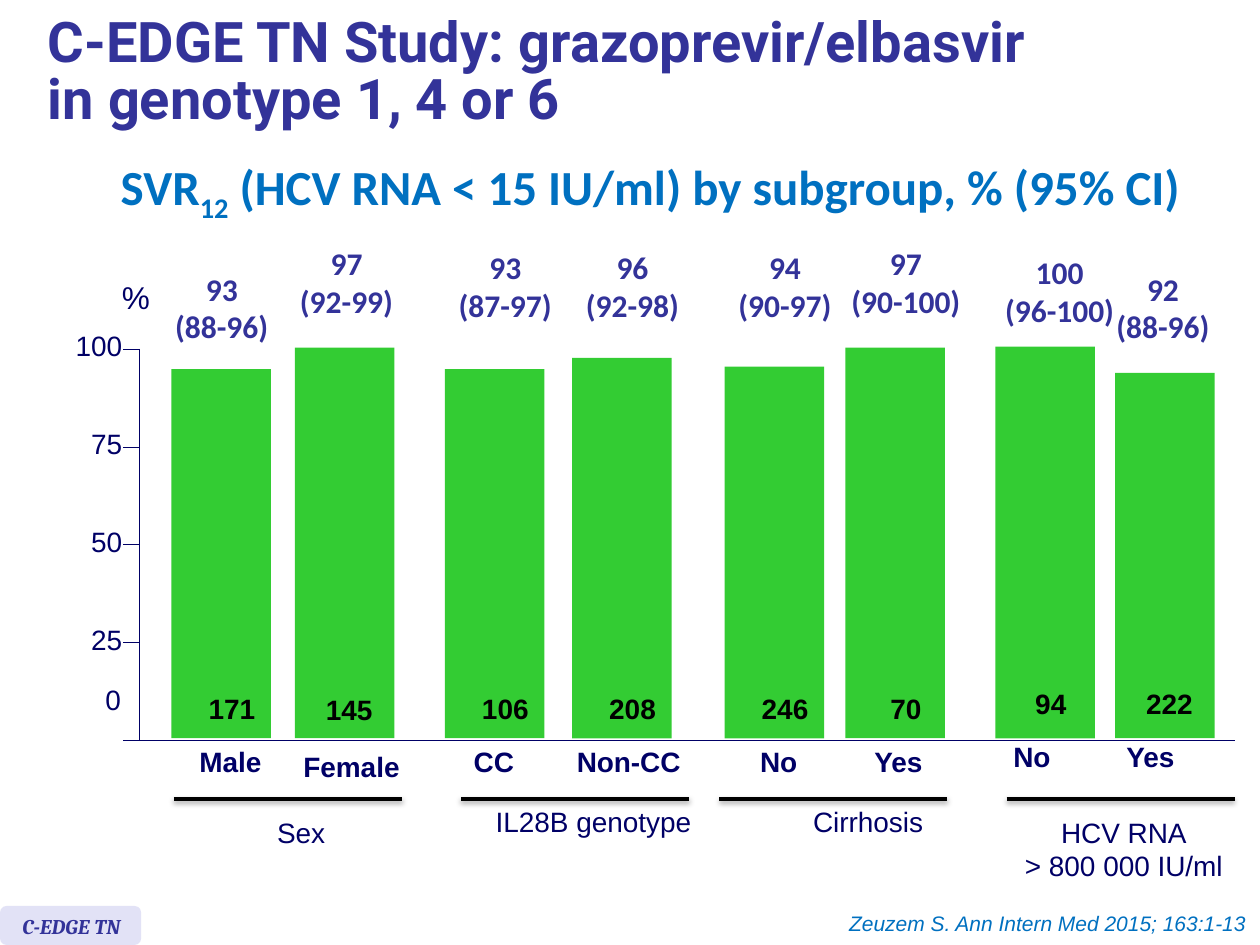
from collections import namedtuple

from lxml import etree
from pptx import Presentation
from pptx.dml.color import RGBColor
from pptx.enum import shapes, text
from pptx.oxml import ns
from pptx.util import Inches, Pt

NAVY = RGBColor(0x00, 0x00, 0x66)
INDIGO = RGBColor(0x33, 0x33, 0x99)
BLUE = RGBColor(0x00, 0x70, 0xC0)
GREEN = RGBColor(0x33, 0xCC, 0x33)
LAVENDER = RGBColor(0xE2, 0xE2, 0xF6)
BLACK = RGBColor(0x00, 0x00, 0x00)

LEFT, CENTER, RIGHT = text.PP_ALIGN.LEFT, text.PP_ALIGN.CENTER, text.PP_ALIGN.RIGHT

# x offsets run from the plot's left edge (bar) or the bar's left edge (texts);
# y offsets run down from the baseline.
Bar = namedtuple("Bar", "x height rate interval rate_x rate_y count count_x count_y "
                        "name name_x name_y name_width")
BARS = [
    Bar(0.38, 2.93, "93", "(88-96)", 0.4, -3.74, "171", 0.48, -0.39, "Male", 0.47, 0.03, 0.5),
    Bar(1.36, 3.1, "97", "(92-99)", 0.41, -3.94, "145", 0.43, -0.38, "Female", 0.45, 0.07, 0.77),
    Bar(2.55, 2.93, "93", "(87-97)", 0.48, -3.91, "106", 0.48, -0.39, "CC", 0.39, 0.03, 0.32),
    Bar(3.56, 3.02, "96", "(92-98)", 0.48, -3.91, "208", 0.48, -0.39, "Non-CC", 0.45, 0.03, 0.84),
    Bar(4.77, 2.95, "94", "(90-97)", 0.48, -3.91, "246", 0.48, -0.39, "No", 0.43, 0.03, 0.3),
    Bar(5.73, 3.1, "97", "(90-100)", 0.48, -3.94, "70", 0.48, -0.39, "Yes", 0.42, 0.03, 0.4),
    Bar(6.92, 3.11, "100", "(96-100)", 0.51, -3.87, "94", 0.44, -0.43, "No", 0.29, -0.01, 0.3),
    Bar(7.87, 2.9, "92", "(88-96)", 0.38, -3.74, "222", 0.43, -0.43, "Yes", 0.28, -0.01, 0.4),
]
# Rule offset, caption centre, caption drop, caption width, caption lines
GROUPS = [
    (0.4, 1.41, 0.08, 0.59, ["Sex"]),
    (2.68, 3.73, 0, 1.77, ["IL28B genotype"]),
    (4.73, 5.91, 0, 1.09, ["Cirrhosis"]),
    (7.01, 7.94, 0.08, 1.86, ["HCV RNA", "> 800 000 IU/ml"]),
]


def write(frame, lines, size=16, font="Arial", color=NAVY, bold=False, italic=False,
          align=CENTER, spacing=None, wrap=False, inset=True):
    """Fill a frame; a line may be a list of spans whose odd entries are subscripts."""
    frame.word_wrap = wrap
    frame.auto_size = text.MSO_AUTO_SIZE.NONE
    frame.vertical_anchor = text.MSO_ANCHOR.TOP
    if not inset:
        frame.margin_left = frame.margin_right = frame.margin_top = frame.margin_bottom = 0
    for index, line in enumerate(lines):
        para = frame.paragraphs[0] if index == 0 else frame.add_paragraph()
        para.alignment = align
        if spacing:
            para.line_spacing = spacing
        for position, words in enumerate([line] if isinstance(line, str) else line):
            span = para.add_run()
            span.text = words
            span.font.name, span.font.size = font, Pt(size)
            span.font.bold, span.font.italic = bold, italic
            span.font.color.rgb = color
            if position % 2:
                span.font._element.set("baseline", "-25000")


def add_text(page, lines, left, top, width, height, **style):
    box = page.shapes.add_textbox(Inches(left), Inches(top), Inches(width), Inches(height))
    write(box.text_frame, lines, **style)


def add_centered(page, lines, center, top, width, height, **style):
    add_text(page, lines, center - width / 2, top, width, height, **style)


def add_block(page, kind, left, top, width, height, color):
    block = page.shapes.add_shape(kind, Inches(left), Inches(top), Inches(width), Inches(height))
    block.shadow.inherit = False
    block.fill.solid()
    block.fill.fore_color.rgb = color
    block.line.fill.background()


def add_line(page, x1, y1, x2, y2, color=NAVY, weight=0.5, shadow=False):
    line = page.shapes.add_connector(shapes.MSO_CONNECTOR.STRAIGHT,
                                     Inches(x1), Inches(y1), Inches(x2), Inches(y2))
    line.line.color.rgb = color
    line.line.width = Pt(weight)
    effects = etree.SubElement(line._element.spPr, ns.qn("a:effectLst"))
    if shadow:
        outer = etree.SubElement(effects, ns.qn("a:outerShdw"), blurRad=str(Pt(3.1)),
                                 dist=str(Pt(1.6)), dir="5400000", rotWithShape="0")
        tint = etree.SubElement(outer, ns.qn("a:srgbClr"), val="000000")
        etree.SubElement(tint, ns.qn("a:alpha"), val="38000")


def place_title(page, left, top, width, height):
    title = page.shapes.title
    title.left, title.top = Inches(left), Inches(top)
    title.width, title.height = Inches(width), Inches(height)
    write(title.text_frame, ["C-EDGE TN Study: grazoprevir/elbasvir", "in genotype 1, 4 or 6"],
          size=32, font="Roboto", color=INDIGO, bold=True, align=LEFT, spacing=0.85, wrap=True)


def draw_axes(page, left, top, width, height):
    tick, baseline = 0.13, top + height
    add_line(page, left + tick, top, left + tick, baseline)
    add_line(page, left, baseline, left + width, baseline)
    for index, label in enumerate(["100", "75", "50", "25"]):
        y = top + index * height / 4
        label_width = 0.13 * len(label)
        add_line(page, left, y, left + tick, y)
        add_text(page, [label], left - 0.01 - label_width, y - 0.16, label_width, 0.35,
                 align=RIGHT, inset=False)
    add_text(page, ["0"], left - 0.14, baseline - 0.46, 0.12, 0.27, align=RIGHT, inset=False)
    add_text(page, ["%"], left - 0.11, top - 0.61, 0.43, 0.52, size=18, align=LEFT)


def draw_bars(page, left, baseline):
    for bar in BARS:
        x = left + bar.x
        add_block(page, shapes.MSO_SHAPE.RECTANGLE, x, baseline - 0.02 - bar.height,
                  0.79, bar.height, GREEN)
        add_centered(page, [bar.rate, bar.interval], x + bar.rate_x, baseline + bar.rate_y,
                     0.88 if len(bar.interval) > 7 else 0.75, 0.78,
                     size=18, font="Calibri", color=INDIGO, bold=True, inset=False)
        add_centered(page, [bar.count], x + bar.count_x, baseline + bar.count_y,
                     0.13 * len(bar.count), 0.35, color=BLACK, bold=True, inset=False)
        add_centered(page, [bar.name], x + bar.name_x, baseline + bar.name_y,
                     bar.name_width, 0.27, bold=True, inset=False)


def draw_groups(page, left, top):
    for rule, center, drop, width, lines in GROUPS:
        add_line(page, left + rule, top, left + rule + 1.81, top,
                 color=BLACK, weight=2, shadow=True)
        add_centered(page, lines, left + center, top + drop, width, 0.1 + 0.27 * len(lines))


def draw_plot(page, left, top, width, height):
    draw_axes(page, left, top, width, height)
    draw_bars(page, left, top + height)
    draw_groups(page, left, top + height + 0.46)


def draw_footer(page, left, top, width, height):
    add_block(page, shapes.MSO_SHAPE.ROUNDED_RECTANGLE, left, top, 1.12, height, LAVENDER)
    add_text(page, ["C-EDGE TN"], left + 0.08, top + 0.01, 1.22, 0.3, size=12, font="Cambria",
             color=INDIGO, bold=True, italic=True, align=LEFT, wrap=True)
    add_text(page, ["Zeuzem S. Ann Intern Med 2015; 163:1-13"], left + width - 5, top - 0.01,
             4.99, 0.3, size=12, color=BLUE, italic=True, align=RIGHT, wrap=True)


def main():
    deck = Presentation()
    deck.slide_width, deck.slide_height = Inches(10), Inches(7.5)
    page = deck.slides.add_slide(deck.slide_layouts[5])
    place_title(page, 0.28, 0.08, 9.13, 1.07)
    add_text(page, [["SVR", "12", " (HCV RNA < 15 IU/ml) by subgroup, % (95% CI)"]],
             0.75, 1.4, 8.82, 0.46, size=28, font="Calibri", color=BLUE, bold=True,
             spacing=Pt(23.6))
    draw_plot(page, 0.98, 2.77, 8.82, 3.11)
    draw_footer(page, 0, 7.19, 10, 0.31)
    deck.save("out.pptx")


if __name__ == "__main__":
    main()
